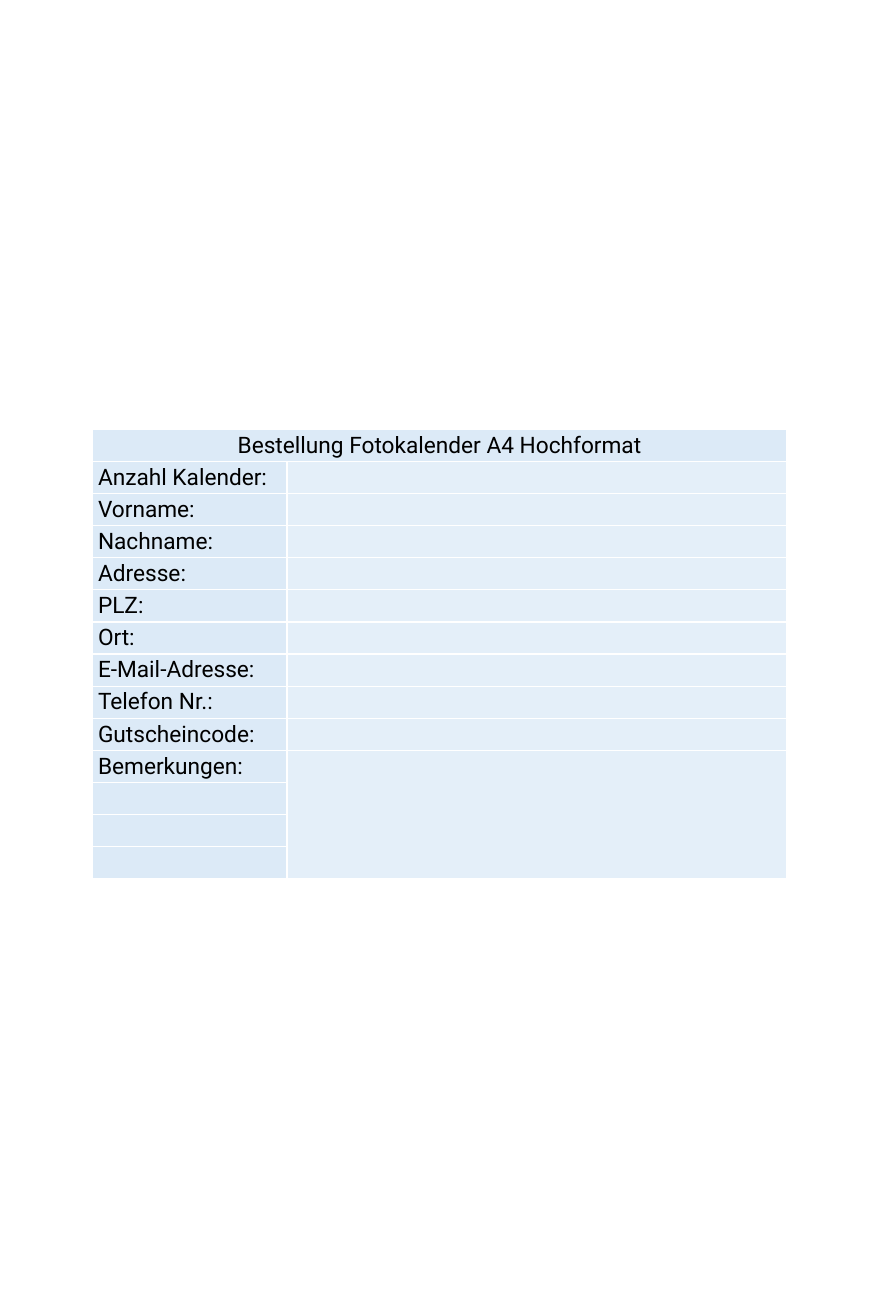
from lxml.etree import SubElement as Sub
from pptx import Presentation
from pptx.dml.color import RGBColor
from pptx.enum.text import PP_ALIGN as Align
from pptx.oxml.ns import qn
from pptx.util import Pt

TITLE = "Bestellung Fotokalender A4 Hochformat"
LABELS = ["Anzahl Kalender:", "Vorname:", "Nachname:", "Adresse:", "PLZ:", "Ort:",
          "E-Mail-Adresse:", "Telefon Nr.:", "Gutscheincode:", "Bemerkungen:"]
SPARE = 3
FACE = "Roboto"
SIZE = 15
BLUE = "DCEAF7"
WHITE = "FFFFFF"
BLACK = "000000"


def color(code):
    return RGBColor.from_string(code)


def border(cell):
    props = cell._tc.get_or_add_tcPr()
    for side in ("lnL", "lnR", "lnT", "lnB"):
        line = Sub(props, qn(f"a:{side}"), w=str(Pt(1)))
        Sub(Sub(line, qn("a:solidFill")), qn("a:srgbClr"), val=WHITE)


def paint(cell, alpha):
    cell.fill.solid()
    cell.fill.fore_color.rgb = color(BLUE)
    if alpha < 100:
        tone = cell._tc.tcPr.find(qn("a:solidFill")).find(qn("a:srgbClr"))
        Sub(tone, qn("a:alpha"), val=str(alpha * 1000))


def write(cell, text):
    cell.margin_left = cell.margin_right = Pt(3.6)
    cell.margin_top = cell.margin_bottom = Pt(1.8)
    para = cell.text_frame.paragraphs[0]
    if not text:
        end = Sub(para._p, qn("a:endParaRPr"), sz=str(SIZE * 100))
        Sub(end, qn("a:latin"), typeface=FACE)
        return
    para.text = text
    font = para.runs[0].font
    font.name, font.size = FACE, Pt(SIZE)
    font.color.rgb = color(BLACK)


def form(slide, left, top, width, height):
    names = [TITLE] + LABELS + [""] * SPARE
    count = len(names)
    frame = slide.shapes.add_table(count, 2, Pt(left), Pt(top), Pt(width), Pt(height))
    table = frame.table
    table.first_row = table.horz_banding = False
    label = width * 0.28
    table.columns[0].width = Pt(label)
    table.columns[1].width = Pt(width - label)
    for index, name in enumerate(names):
        table.rows[index].height = Pt(height / count)
        for col, text in enumerate((name, "")):
            cell = table.cell(index, col)
            border(cell)
            paint(cell, 75 if col and index else 100)
            write(cell, text)
    head = table.cell(0, 0)
    head.merge(table.cell(0, 1))
    head.text_frame.paragraphs[0].alignment = Align.CENTER
    table.cell(len(LABELS), 1).merge(table.cell(count - 1, 1))


def main():
    deck = Presentation()
    deck.slide_width, deck.slide_height = Pt(581.12), Pt(870.25)
    slide = deck.slides.add_slide(deck.slide_layouts[6])
    form(slide, 61.2, 283.9, 459, 296.5)
    deck.save("out.pptx")


if __name__ == "__main__":
    main()
